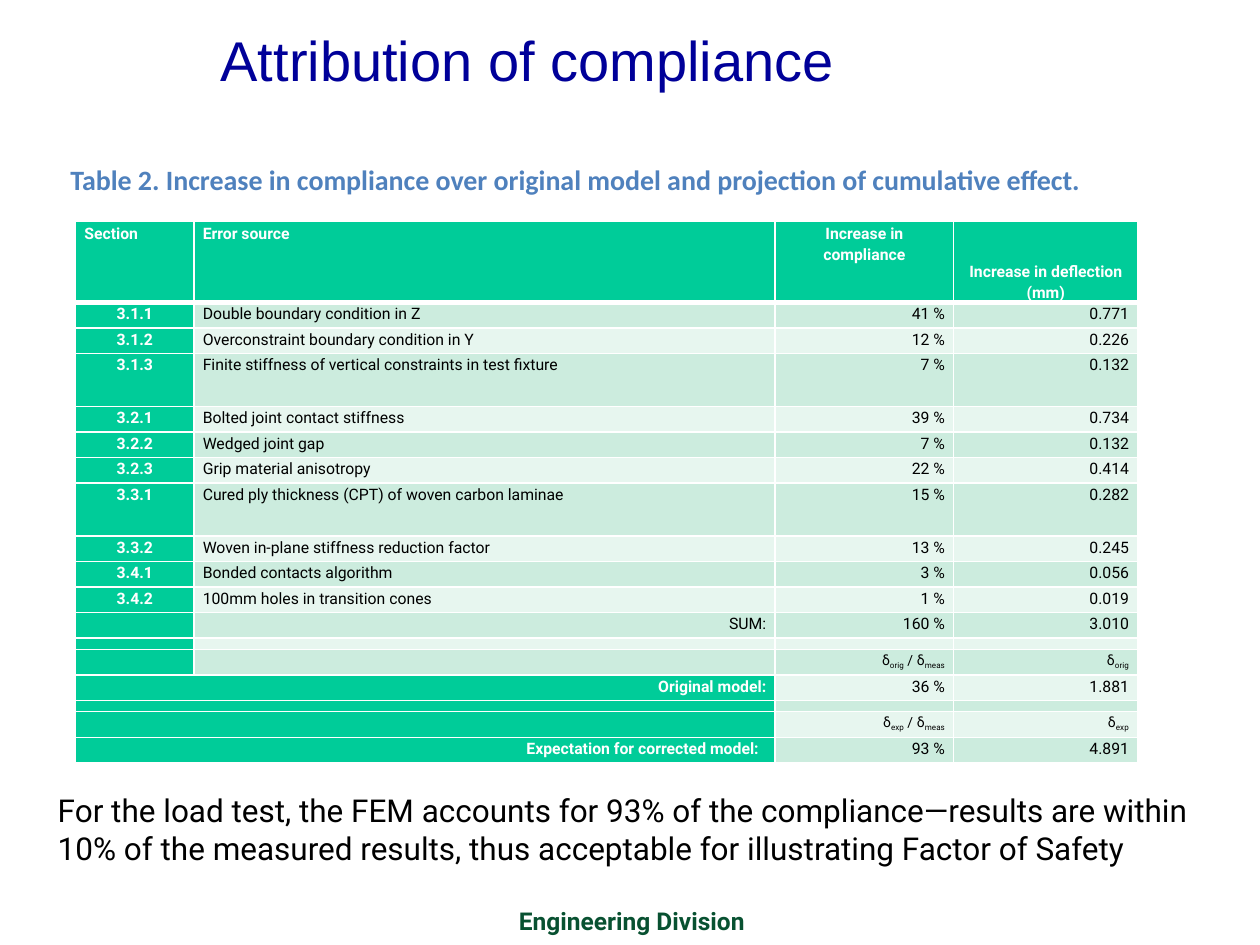
import pptx
import pptx.util
import pptx.dml.color
import pptx.enum.text
import pptx.oxml.ns
from lxml import etree

Inches, Pt = pptx.util.Inches, pptx.util.Pt
ALIGN = pptx.enum.text.PP_ALIGN
ANCHOR = pptx.enum.text.MSO_ANCHOR
qn = pptx.oxml.ns.qn

HUES = {"navy": "000099", "blue": "4F81BD", "green": "00CC99", "dark": "085131",
        "band": "CCECDE", "pale": "E7F6EF", "white": "FFFFFF", "black": "000000"}

HEAD = ["Section", "Error source", "Increase in compliance", "Increase in deflection (mm)"]
# An underscore starts a subscript that runs to the next space
ROWS = [
    ["3.1.1", "Double boundary condition in Z", "41 %", "0.771"],
    ["3.1.2", "Overconstraint boundary condition in Y", "12 %", "0.226"],
    ["3.1.3", "Finite stiffness of vertical constraints in test fixture", "7 %", "0.132"],
    ["3.2.1", "Bolted joint contact stiffness", "39 %", "0.734"],
    ["3.2.2", "Wedged joint gap", "7 %", "0.132"],
    ["3.2.3", "Grip material anisotropy", "22 %", "0.414"],
    ["3.3.1", "Cured ply thickness (CPT) of woven carbon laminae", "15 %", "0.282"],
    ["3.3.2", "Woven in-plane stiffness reduction factor", "13 %", "0.245"],
    ["3.4.1", "Bonded contacts algorithm", "3 %", "0.056"],
    ["3.4.2", "100mm holes in transition cones", "1 %", "0.019"],
    ["", "SUM:", "160 %", "3.010"],
    ["", "", "", ""],
    ["", "", "δ_orig / δ_meas", "δ_orig"],
    ["Original model:", "", "36 %", "1.881"],
    ["", "", "", ""],
    ["", "", "δ_exp / δ_meas", "δ_exp"],
    ["Expectation for corrected model:", "", "93 %", "4.891"],
]
COLS = [0.94, 4.61, 1.42, 1.46]
TALL = {0: 0.64, 3: 0.42, 7: 0.42, 12: 0.09, 15: 0.09}  # rows of special height
SPAN = 14  # from this row on, the first two columns are one


def rgb(hue):
    return pptx.dml.color.RGBColor.from_string(HUES[hue])


def style(font, name, size, hue, bold=False):
    font.name, font.size, font.bold = name, Pt(size), bold
    font.color.rgb = rgb(hue)


def add_text(slide, box, text, name, size, hue, bold=False, align=ALIGN.LEFT):
    frame = slide.shapes.add_textbox(*map(Inches, box)).text_frame
    frame.word_wrap = True
    frame.text = text
    para = frame.paragraphs[0]
    para.alignment = align
    style(para.runs[0].font, name, size, hue, bold)


def add_title(slide, box, text):
    title = slide.shapes.title
    title.left, title.top, title.width, title.height = map(Inches, box)
    frame = title.text_frame
    frame.text = text
    frame.vertical_anchor = ANCHOR.MIDDLE
    frame.paragraphs[0].alignment = ALIGN.CENTER
    style(frame.paragraphs[0].runs[0].font, "Arial", 32, "navy")


def add_edges(cell, top, base):
    props = cell._tc.get_or_add_tcPr()
    for side, width in (("L", 1), ("R", 1), ("T", top), ("B", base)):
        line = etree.SubElement(props, qn("a:ln" + side), w=str(Pt(width)))
        fill = etree.SubElement(line, qn("a:solidFill"))
        etree.SubElement(fill, qn("a:srgbClr"), val=HUES["white"])


def fill_text(para, text, hue, bold):
    if "_" not in text:
        para.text = text
        for run in para.runs:
            style(run.font, "Roboto", 9, hue, bold)
        return
    for i, part in enumerate(text.replace(" /", "_ /").split("_")):
        run = para.add_run()
        run.text = part
        style(run.font, "Roboto", 8, hue, bold)
        if i % 2:
            run.font._element.set("baseline", "-25000")


def set_cell(cell, text, row, col):
    head = row == 0
    key = head or col == 0
    add_edges(cell, 3 if row == 1 else 1, 3 if head else 1)
    cell.fill.solid()
    cell.fill.fore_color.rgb = rgb("green" if key else "band" if row % 2 else "pale")
    cell.margin_left = cell.margin_right = Inches(0.07)
    cell.margin_top = cell.margin_bottom = 0
    cell.vertical_anchor = ANCHOR.BOTTOM if head and col == 3 else ANCHOR.TOP
    para = cell.text_frame.paragraphs[0]
    para.line_spacing = 1.15
    if head:
        para.alignment = ALIGN.CENTER if col > 1 else ALIGN.LEFT
    elif col == 0:
        para.alignment = ALIGN.RIGHT if row >= SPAN else ALIGN.CENTER
    else:
        para.alignment = ALIGN.RIGHT if col > 1 or text == "SUM:" else ALIGN.LEFT
    if text:
        fill_text(para, text, "white" if key else "black", key)
    else:  # a small end mark lets the thin rows stay thin
        etree.SubElement(para._p, qn("a:endParaRPr"), sz="400")


def add_grid(slide, box):
    data = [HEAD] + ROWS
    table = slide.shapes.add_table(len(data), len(COLS), *map(Inches, box)).table
    for col, width in zip(table.columns, COLS):
        col.width = Inches(width)
    plain = (box[3] - sum(TALL.values())) / (len(data) - len(TALL))
    for r, texts in enumerate(data):
        table.rows[r].height = Inches(TALL.get(r, plain))
        for c, text in enumerate(texts):
            set_cell(table.cell(r, c), text, r, c)
        if r >= SPAN:
            table.cell(r, 0).merge(table.cell(r, 1))
    table.cell(len(data) - 1, 0).margin_right = Inches(0.13)


def main():
    deck = pptx.Presentation()
    deck.slide_width, deck.slide_height = Inches(10), Inches(7.5)
    slide = deck.slides.add_slide(deck.slide_layouts[5])
    # Footer
    add_text(slide, (1.85, 7.14, 6.33, 0.33), "Engineering Division",
             "Roboto", 14, "dark", True, ALIGN.CENTER)
    # Title
    add_title(slide, (0, -0.03, 8.5, 1), "Attribution of compliance ")
    # Table and its caption
    add_grid(slide, (0.6, 1.76, 8.43, 4.3))
    add_text(slide, (0.46, 1.24, 8.71, 1.04),
             "Table 2. Increase in compliance over original model and "
             "projection of cumulative effect.", "Calibri", 16, "blue", True)
    # Conclusion
    add_text(slide, (0.36, 6.23, 9.42, 0.71),
             "For the load test, the FEM accounts for 93% of the compliance—results are "
             "within 10% of the measured results, thus acceptable for illustrating "
             "Factor of Safety", "Roboto", 18, "black")
    deck.save("out.pptx")


if __name__ == "__main__":
    main()
